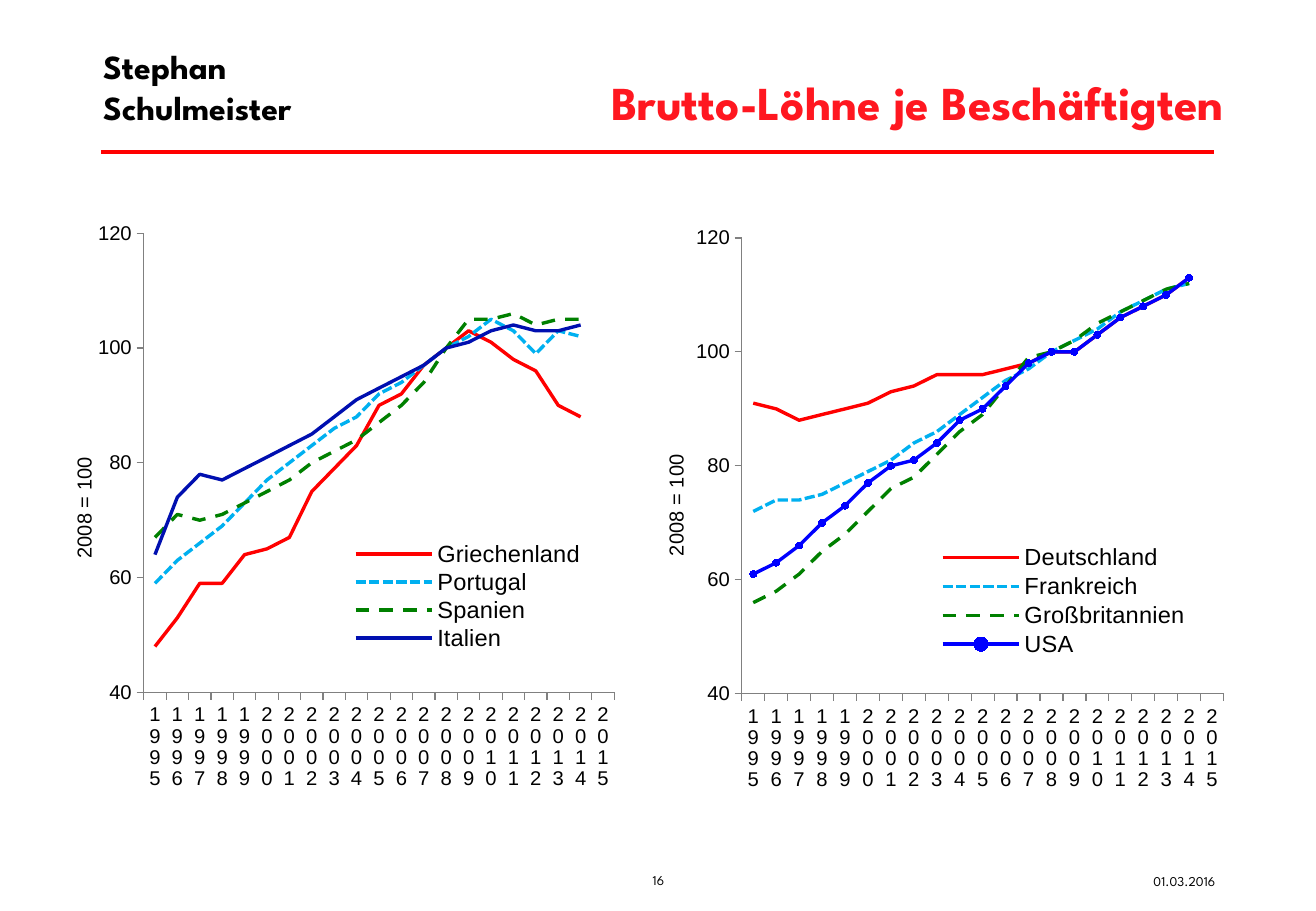
from lxml import etree
from pptx import Presentation
from pptx.chart.data import CategoryChartData
from pptx.dml.color import RGBColor
from pptx.enum.chart import XL_CHART_TYPE, XL_LEGEND_POSITION, XL_MARKER_STYLE
from pptx.enum.chart import XL_TICK_LABEL_POSITION, XL_TICK_MARK
from pptx.enum.dml import MSO_LINE
from pptx.enum.shapes import MSO_CONNECTOR
from pptx.enum.text import MSO_ANCHOR, PP_ALIGN
from pptx.oxml.ns import qn
from pptx.util import Inches, Pt

LINE_CHART = XL_CHART_TYPE.LINE_MARKERS
LEGEND_RIGHT = XL_LEGEND_POSITION.RIGHT
NO_MARKER, CIRCLE = XL_MARKER_STYLE.NONE, XL_MARKER_STYLE.CIRCLE
LABELS_LOW = XL_TICK_LABEL_POSITION.LOW
TICK_OUT, TICK_NONE = XL_TICK_MARK.OUTSIDE, XL_TICK_MARK.NONE
SHORT_DASH, DASH = MSO_LINE.SQUARE_DOT, MSO_LINE.DASH
STRAIGHT = MSO_CONNECTOR.STRAIGHT
TOP, MIDDLE = MSO_ANCHOR.TOP, MSO_ANCHOR.MIDDLE
LEFT, CENTER, RIGHT = PP_ALIGN.LEFT, PP_ALIGN.CENTER, PP_ALIGN.RIGHT

COLORS = {"text": "000000", "title": "FF1720", "red": "FF0000", "sky": "00B0F0",
          "green": "008000", "navy": "000FB0", "blue": "0000FF", "axis": "808080"}
HEAD_FONT, CHART_FONT = "League Spartan", "Arial"
WIDTH, HEIGHT = Inches(10.83), Inches(7.5)
YEARS = [str(year) for year in range(1995, 2016)]

# Series: name, colour, dash, has markers, values from 1995 to 2014
SOUTH = [
    ("Griechenland", "red", None, False,
     [48, 53, 59, 59, 64, 65, 67, 75, 79, 83, 90, 92, 97, 100, 103, 101, 98, 96, 90, 88]),
    ("Portugal", "sky", SHORT_DASH, False,
     [59, 63, 66, 69, 73, 77, 80, 83, 86, 88, 92, 94, 97, 100, 102, 105, 103, 99, 103, 102]),
    ("Spanien", "green", DASH, False,
     [67, 71, 70, 71, 73, 75, 77, 80, 82, 84, 87, 90, 94, 100, 105, 105, 106, 104, 105, 105]),
    ("Italien", "navy", None, False,
     [64, 74, 78, 77, 79, 81, 83, 85, 88, 91, 93, 95, 97, 100, 101, 103, 104, 103, 103, 104]),
]
NORTH = [
    ("Deutschland", "red", None, False,
     [91, 90, 88, 89, 90, 91, 93, 94, 96, 96, 96, 97, 98, 100, 100, 103, 106, 108, 110, 113]),
    ("Frankreich", "sky", SHORT_DASH, False,
     [72, 74, 74, 75, 77, 79, 81, 84, 86, 89, 92, 95, 97, 100, 102, 104, 107, 109, 111, 112]),
    ("Großbritannien", "green", DASH, False,
     [56, 58, 61, 65, 68, 72, 76, 78, 82, 86, 89, 94, 99, 100, 102, 105, 107, 109, 111, 112]),
    ("USA", "blue", None, True,
     [61, 63, 66, 70, 73, 77, 80, 81, 84, 88, 90, 94, 98, 100, 100, 103, 106, 108, 110, 113]),
]


def color(name):
    return RGBColor.from_string(COLORS[name])


def grid(*cells):
    """Turn columns and rows of a 100 by 100 grid into slide lengths."""
    return [round((HEIGHT if i % 2 else WIDTH) * cell / 100) for i, cell in enumerate(cells)]


def style_font(font, name, size, tone="text", bold=False):
    font.name, font.size, font.bold = name, Pt(size), bold
    font.color.rgb = color(tone)


def fill_text(shape, text, size, align, anchor, tone="text", bold=False):
    frame = shape.text_frame
    frame.text = text
    frame.word_wrap = True
    frame.vertical_anchor = anchor
    para = frame.paragraphs[0]
    para.alignment = align
    style_font(para.runs[0].font, HEAD_FONT, size, tone, bold)
    return frame


def add_text(page, cells, *text_style, **options):
    box = page.shapes.add_textbox(*grid(*cells))
    return fill_text(box, *text_style, **options)


def add_rule(page, cells):
    rule = page.shapes.add_connector(STRAIGHT, *grid(*cells))
    rule.line.color.rgb = color("red")
    rule.line.width = Pt(2.25)
    etree.SubElement(rule._element.spPr, qn("a:effectLst"))


def set_layout(part, inner=False, **shares):
    """Place a chart part by shares of the chart's size."""
    layout = part.find(qn("c:layout"))
    if layout is None:
        layout = etree.Element(qn("c:layout"))
        overlay = part.find(qn("c:overlay"))
        part.insert(0 if overlay is None else part.index(overlay), layout)
    manual = etree.SubElement(layout, qn("c:manualLayout"))
    settings = {"layoutTarget": "inner"} if inner else {}
    settings.update(xMode="edge", yMode="edge", **shares)
    for tag, value in settings.items():
        etree.SubElement(manual, qn("c:" + tag)).set("val", str(value))


def style_axis(axis):
    axis.has_major_gridlines = False
    axis.major_tick_mark, axis.minor_tick_mark = TICK_OUT, TICK_NONE
    axis.format.line.color.rgb = color("axis")
    style_font(axis.tick_labels.font, CHART_FONT, 12)


def style_series(series, tone, dash, has_markers):
    series.smooth = False
    line = series.format.line
    line.color.rgb = color(tone)
    line.width = Pt(2)
    if dash is not None:
        line.dash_style = dash
    marker = series.marker
    marker.style = CIRCLE if has_markers else NO_MARKER
    if has_markers:
        marker.size = 4
        marker.format.fill.solid()
        marker.format.fill.fore_color.rgb = color(tone)
        marker.format.line.color.rgb = color(tone)


def add_wage_chart(page, cells, countries, plot, legend_place, title_place):
    data = CategoryChartData(number_format="0")
    data.categories = YEARS
    for name, _, _, _, values in countries:
        data.add_series(name, values + [None])
    chart = page.shapes.add_chart(LINE_CHART, *grid(*cells), data).chart
    chart.has_title = False
    style_font(chart.font, CHART_FONT, 12)
    chart.plots[0].vary_by_categories = False
    for series, (_, tone, dash, has_markers, _) in zip(chart.plots[0].series, countries):
        style_series(series, tone, dash, has_markers)
    set_layout(chart._chartSpace.chart.plotArea, inner=True, **plot)

    # Year axis with digits stacked under each tick
    years = chart.category_axis
    style_axis(years)
    years.tick_label_position = LABELS_LOW
    label_body = years._element.find(qn("c:txPr")).find(qn("a:bodyPr"))
    label_body.set("rot", "0")
    label_body.set("vert", "horz")

    # Index axis with its upright title
    index = chart.value_axis
    style_axis(index)
    index.minimum_scale, index.maximum_scale, index.major_unit = 40, 120, 20
    index.tick_labels.number_format = "0"
    index.tick_labels.number_format_is_linked = False
    frame = index.axis_title.text_frame
    frame.text = "2008 = 100"
    style_font(frame.paragraphs[0].runs[0].font, CHART_FONT, 12)
    frame._txBody.bodyPr.set("rot", "-5400000")
    frame._txBody.bodyPr.set("vert", "horz")
    set_layout(index.axis_title._element, **title_place)

    # Legend inside the plot
    chart.has_legend = True
    chart.legend.position = LEGEND_RIGHT
    chart.legend.include_in_layout = False
    style_font(chart.legend.font, CHART_FONT, 14)
    set_layout(chart.legend._element, **legend_place)


def main():
    deck = Presentation()
    deck.slide_width, deck.slide_height = WIDTH, HEIGHT
    page = deck.slides.add_slide(deck.slide_layouts[5])

    # Header
    title = page.shapes.title
    title.left, title.top, title.width, title.height = grid(35.18, 2.8, 58.73, 16.67)
    fill_text(title, "Brutto-Löhne je Beschäftigten", 28, RIGHT, MIDDLE, "title", True)
    author = add_text(page, (6.93, 4.4, 18.47, 10.27), "Stephan Schulmeister",
                      20, LEFT, TOP, bold=True)
    author.paragraphs[0].space_before = Pt(10)
    add_rule(page, (7.66, 16.67, 92.24, 16.67))

    # Charts
    add_wage_chart(page, (4.71, 23.73, 43.77, 62.93), SOUTH,
                   dict(x=0.142, y=0.03, w=0.817, h=0.81),
                   dict(x=0.5, y=0.57, w=0.41, h=0.2), dict(x=0.01, y=0.42))
    add_wage_chart(page, (48.75, 24.27, 46.17, 62.53), NORTH,
                   dict(x=0.165, y=0.03, w=0.793, h=0.81),
                   dict(x=0.49, y=0.57, w=0.41, h=0.21), dict(x=0.03, y=0.41))

    # Footer
    number = add_text(page, (47.18, 95.73, 5.72, 1.73), "16", 8, CENTER, TOP)
    number.margin_left = number.margin_right = number.margin_top = number.margin_bottom = 0
    number.paragraphs[0].space_before = Pt(4)
    add_text(page, (85.7, 95.2, 7.57, 3.07), "01.03.2016", 8, RIGHT, MIDDLE)

    deck.save("out.pptx")


if __name__ == "__main__":
    main()
